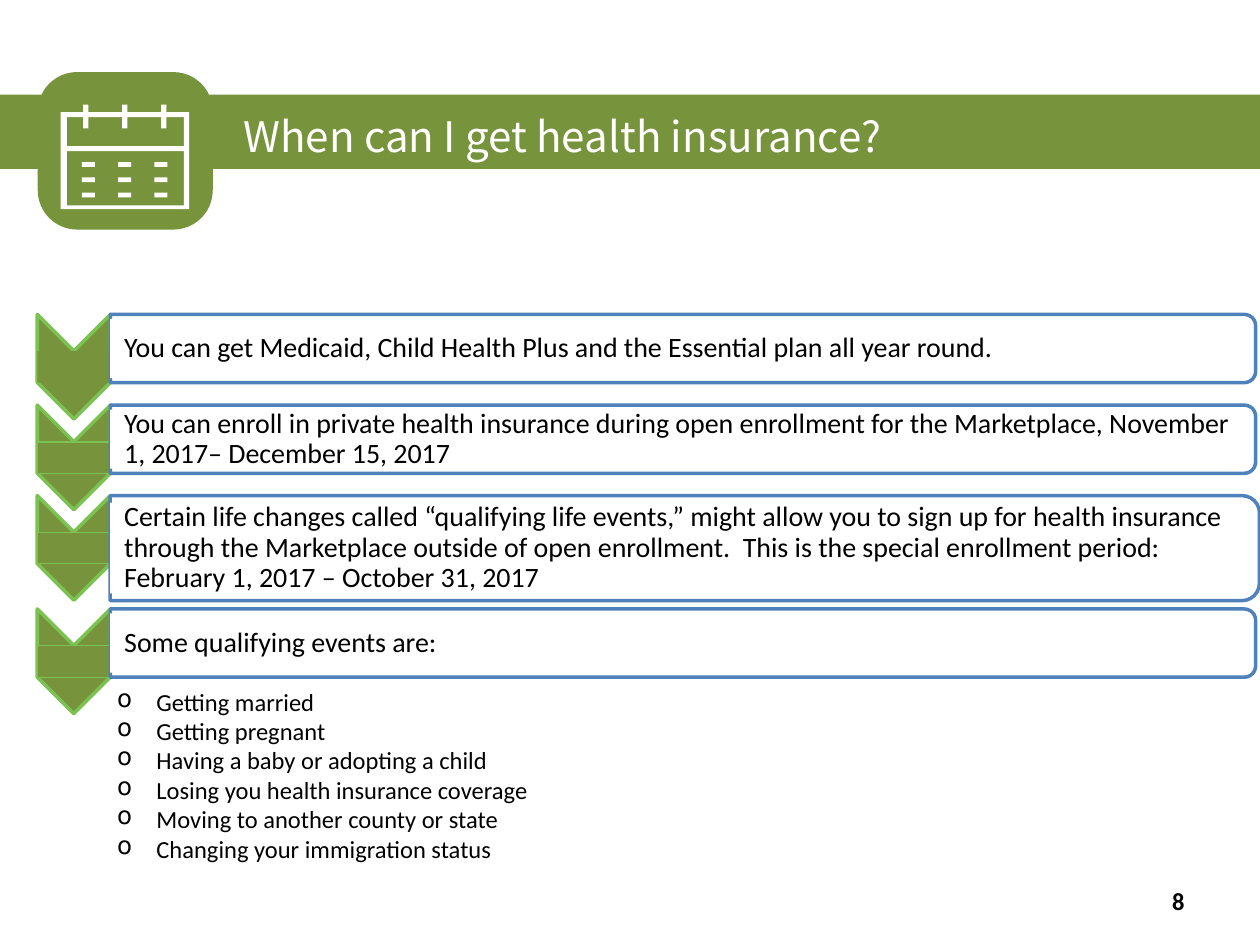
import dataclasses

import lxml.etree
import pptx
import pptx.dml.color
import pptx.enum.shapes
import pptx.enum.text
import pptx.oxml.ns
import pptx.util

Pt = pptx.util.Pt
SHAPES = pptx.enum.shapes.MSO_SHAPE
ALIGN = pptx.enum.text.PP_ALIGN
ANCHOR = pptx.enum.text.MSO_ANCHOR


@dataclasses.dataclass(frozen=True)
class Theme:
    olive: str = "77933C"
    lime: str = "7BC252"
    blue: str = "4F81BD"
    white: str = "FFFFFF"
    black: str = "000000"
    body_font: str = "Calibri"
    title_font: str = "Noto Sans CJK JP"
    title_size: int = 24
    step_size: int = 16
    small_size: int = 14


def rgb(color):
    return pptx.dml.color.RGBColor.from_string(color)


def write(shape, text, *, size, font, color, bold=False, align=ALIGN.LEFT,
          anchor=ANCHOR.TOP, margins=(7.2, 3.6, 7.2, 3.6), spacing=None,
          bullet=None, hang=0, grow=False):
    frame = shape.text_frame
    frame.word_wrap = True
    frame.vertical_anchor = anchor
    if grow:
        frame.auto_size = pptx.enum.text.MSO_AUTO_SIZE.SHAPE_TO_FIT_TEXT
    (frame.margin_left, frame.margin_top,
     frame.margin_right, frame.margin_bottom) = map(Pt, margins)
    frame.text = text
    for paragraph in frame.paragraphs:
        paragraph.alignment = align
        paragraph.line_spacing = spacing
        paragraph.font.size = Pt(size)
        for run in paragraph.runs:
            run.font.size = Pt(size)
            run.font.name = font
            run.font.bold = bold
            run.font.color.rgb = rgb(color)
        if bullet:
            properties = paragraph._p.get_or_add_pPr()
            properties.set("marL", str(Pt(hang)))
            properties.set("indent", str(-Pt(hang)))
            mark = lxml.etree.SubElement(properties, pptx.oxml.ns.qn("a:buChar"))
            mark.set("char", bullet)


class SlideBuilder:
    """Draws styled elements on the current slide."""

    def __init__(self, slide, theme):
        self.slide = slide
        self.theme = theme

    def paint(self, shape, fill, line=None, width=2):
        shape.shadow.inherit = False
        shape.fill.solid()
        shape.fill.fore_color.rgb = rgb(fill)
        if line:
            shape.line.color.rgb = rgb(line)
            shape.line.width = Pt(width)
        else:
            shape.line.fill.background()
        return shape

    def shape(self, kind, left, top, width, height, fill, line=None, line_width=2):
        block = self.slide.shapes.add_shape(
            kind, Pt(left), Pt(top), Pt(width), Pt(height))
        return self.paint(block, fill, line, line_width)

    def turned(self, kind, left, top, width, height, fill, line):
        shift = (width - height) / 2
        block = self.shape(kind, left + shift, top - shift, height, width, fill, line)
        block.rotation = 90
        return block

    def outline(self, contours, fill):
        first, *others = [[(Pt(x), Pt(y)) for x, y in contour] for contour in contours]
        builder = self.slide.shapes.build_freeform(*first[0], scale=1.0)
        builder.add_line_segments(first[1:], close=True)
        for contour in others:
            builder.move_to(*contour[0])
            builder.add_line_segments(contour[1:], close=True)
        return self.paint(builder.convert_to_shape(), fill)

    def text(self, left, top, width, height, text, **style):
        box = self.slide.shapes.add_textbox(Pt(left), Pt(top), Pt(width), Pt(height))
        write(box, text, **style)

    def calendar(self):
        white = self.theme.white
        rings = [49 + 22.3 * column for column in range(3)]

        def frame(left, top, right, bottom, notch=None):
            upper = [(left, top)]
            if notch is not None:
                for ring in rings:
                    upper += [(ring - 1.5, top), (ring - 1.5, notch),
                              (ring + 1.5, notch), (ring + 1.5, top)]
            return upper + [(right, top), (right, bottom), (left, bottom)]

        self.outline([frame(34.6, 64.1, 108, 119.5, notch=59.8),
                      frame(38.2, 67, 105.1, 83.5, notch=73.4),
                      frame(38.2, 86.4, 105.1, 117.4)], white)
        for column in range(3):
            for row in range(3):
                self.shape(SHAPES.RECTANGLE, 46.8 + 20.7 * column,
                           92.7 + 8.7 * row, 7.5, 2.7, white)

    def step(self, top, height, width, text, band_line):
        theme = self.theme
        chevron = self.turned(SHAPES.CHEVRON, 21.3, top, 41.8, 59.8,
                              theme.olive, theme.lime)
        chevron.adjustments[0] = 0.5
        self.shape(SHAPES.RECTANGLE, 21.3, top + 21, 41.8, 18,
                   theme.olive, band_line, 0.75)
        self.turned(SHAPES.ROUND_2_SAME_RECTANGLE, 63, top, width, height,
                    theme.white, theme.blue)
        inset = height / 15
        label = self.shape(SHAPES.RECTANGLE, 63, top + inset, width - inset,
                           height - 2 * inset, theme.white)
        write(label, text, size=theme.step_size, font=theme.body_font,
              color=theme.black, anchor=ANCHOR.MIDDLE,
              margins=(8, 0.8, 0.8, 0.8), spacing=0.9)


def main():
    theme = Theme()
    deck = pptx.Presentation()
    deck.slide_width, deck.slide_height = Pt(720), Pt(540)
    page = SlideBuilder(deck.slides.add_slide(deck.slide_layouts[6]), theme)

    badge = page.shape(SHAPES.ROUNDED_RECTANGLE, 21.6, 41.2, 100, 90, theme.olive)
    badge.adjustments[0] = 0.25
    page.shape(SHAPES.RECTANGLE, -12, 54, 786, 42.5, theme.olive)
    page.calendar()
    page.text(132, 59.8, 528, 36, "When can I get health insurance?",
              size=theme.title_size, font=theme.title_font, color=theme.white, grow=True)

    steps = [
        (179.7, 39, 654.5, "You can get Medicaid, Child Health Plus and the Essential "
         "plan all year round.", None),
        (231.5, 39, 654.5, "You can enroll in private health insurance during open "
         "enrollment for the Marketplace, November 1, 2017– December 15, 2017", theme.lime),
        (283.2, 60, 656.7, "Certain life changes called “qualifying life events,” might "
         "allow you to sign up for health insurance through the Marketplace outside of "
         "open enrollment.  This is the special enrollment period: "
         "February 1, 2017 – October 31, 2017", theme.lime),
        (348, 39, 654.5, "Some qualifying events are:", theme.lime),
    ]
    for step in steps:
        page.step(*step)

    events = ["Getting married", "Getting pregnant", "Having a baby or adopting a child",
              "Losing you health insurance coverage", "Moving to another county or state",
              "Changing your immigration status"]
    page.text(59.8, 388.8, 636.5, 108.7, "\n".join(events), size=theme.small_size,
              font=theme.body_font, color=theme.black, bullet="o", hang=22.5, grow=True)
    page.text(516, 500.5, 168, 28.8, "8", size=theme.small_size, font=theme.body_font,
              color=theme.black, bold=True, align=ALIGN.RIGHT, anchor=ANCHOR.MIDDLE)
    deck.save("out.pptx")


if __name__ == "__main__":
    main()
